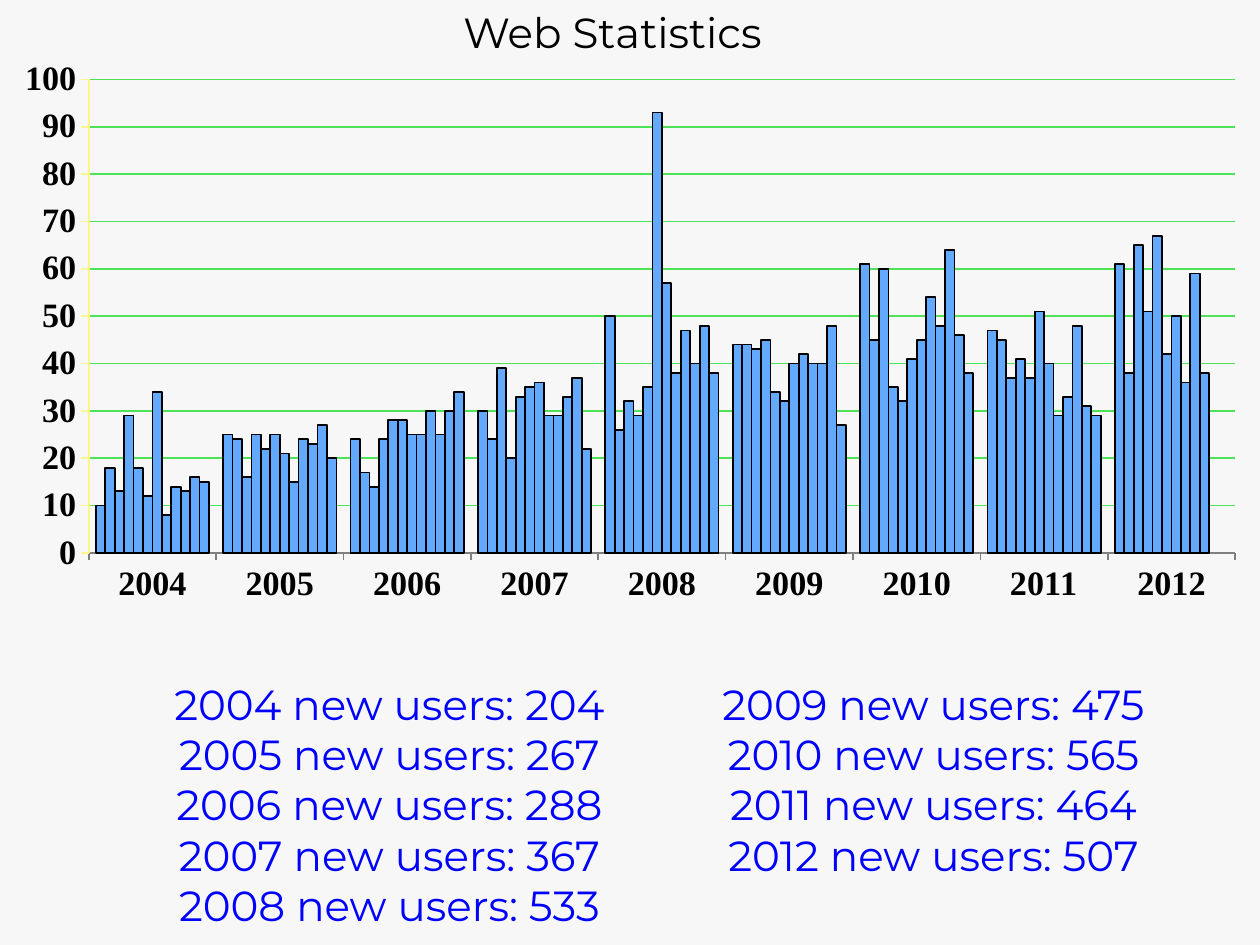
from lxml import etree
from pptx import Presentation
from pptx.chart.data import CategoryChartData
from pptx.dml.color import RGBColor
from pptx.enum.chart import XL_CHART_TYPE as Kind, XL_TICK_LABEL_POSITION as Label
from pptx.enum.chart import XL_TICK_MARK as Tick
from pptx.enum.text import PP_ALIGN as Align
from pptx.oxml.ns import qn
from pptx.util import Emu, Pt

PX = 914400 // 126
BACK = RGBColor(0xF7, 0xF7, 0xF7)
BLACK = RGBColor(0, 0, 0)
BLUE = RGBColor(0, 0, 0xFF)
BAR = RGBColor(0x63, 0xAA, 0xFE)
GRID = RGBColor(0x4E, 0xE2, 0x57)
YELLOW = RGBColor(0xFF, 0xF5, 0x8C)
GREY = RGBColor(0x80, 0x80, 0x80)

TITLE = "Web Statistics"
# New users per month, January first; 2012 stops in October.
MONTHLY = {
    "2004": [10, 18, 13, 29, 18, 12, 34, 8, 14, 13, 16, 15],
    "2005": [25, 24, 16, 25, 22, 25, 21, 15, 24, 23, 27, 20],
    "2006": [24, 17, 14, 24, 28, 28, 25, 25, 30, 25, 30, 34],
    "2007": [30, 24, 39, 20, 33, 35, 36, 29, 29, 33, 37, 22],
    "2008": [50, 26, 32, 29, 35, 93, 57, 38, 47, 40, 48, 38],
    "2009": [44, 44, 43, 45, 34, 32, 40, 42, 40, 40, 48, 27],
    "2010": [61, 45, 60, 35, 32, 41, 45, 54, 48, 64, 46, 38],
    "2011": [47, 45, 37, 41, 37, 51, 40, 29, 33, 48, 31, 29],
    "2012": [61, 38, 65, 51, 67, 42, 50, 36, 59, 38, None, None],
}
TOTALS = {
    "2004": 204, "2005": 267, "2006": 288, "2007": 367, "2008": 533,
    "2009": 475, "2010": 565, "2011": 464, "2012": 507,
}
PLOT = {"x": 0.068, "y": 0.06, "w": 0.921, "h": 0.759}


def box(*px):
    return [Emu(n * PX) for n in px]


def add_text(slide, area, lines, color, align, wrap):
    frame = slide.shapes.add_textbox(*box(*area)).text_frame
    frame.word_wrap = wrap
    frame.text = "\n".join(lines)
    for para in frame.paragraphs:
        para.alignment = align
        font = para.runs[0].font
        font.name, font.size = "Montserrat", Pt(24)
        font.color.rgb = color
    return frame


def set_line(line, color):
    line.color.rgb = color
    line.width = Pt(1)


def set_plot(chart):
    """Fix the inner plot area, in fractions of the chart."""
    area = chart.plots[0]._element.getparent()
    for old in area.findall(qn("c:layout")):
        area.remove(old)
    layout = etree.Element(qn("c:layout"))
    area.insert(0, layout)
    manual = etree.SubElement(layout, qn("c:manualLayout"))
    parts = {"layoutTarget": "inner", "xMode": "edge", "yMode": "edge", **PLOT}
    for tag, val in parts.items():
        etree.SubElement(manual, qn("c:" + tag)).set("val", str(val))


def add_bars(slide):
    data = CategoryChartData()
    data.categories = list(MONTHLY)
    for num, vals in enumerate(zip(*MONTHLY.values()), 1):
        data.add_series(f"Series {num}", vals)
    chart = slide.shapes.add_chart(
        Kind.COLUMN_CLUSTERED, *box(4, 42, 1245, 624), data).chart
    chart.has_legend = chart.has_title = False
    font = chart.font
    font.name, font.size, font.bold = "Times New Roman", Pt(19.5), True
    font.color.rgb = BLACK
    set_plot(chart)

    plot = chart.plots[0]
    plot.gap_width, plot.overlap = 150, 0
    plot.vary_by_categories = False
    for series in plot.series:
        series.format.fill.solid()
        series.format.fill.fore_color.rgb = BAR
        set_line(series.format.line, BLACK)

    years, count = chart.category_axis, chart.value_axis
    for axis, color in ((years, GREY), (count, YELLOW)):
        axis.major_tick_mark, axis.minor_tick_mark = Tick.OUTSIDE, Tick.NONE
        set_line(axis.format.line, color)
    years.tick_label_position = Label.LOW
    years.has_major_gridlines = False
    count.minimum_scale, count.maximum_scale, count.major_unit = 0, 100, 10
    count.has_major_gridlines = True
    set_line(count.major_gridlines.format.line, GRID)


def main():
    deck = Presentation()
    deck.slide_width, deck.slide_height = box(1260, 945)
    slide = deck.slides.add_slide(deck.slide_layouts[6])
    slide.background.fill.solid()
    slide.background.fill.fore_color.rgb = BACK

    add_text(slide, (451, 0, 359, 63), [TITLE], BLACK, Align.LEFT, False)
    add_bars(slide)
    lines = [f"{year} new users: {total}" for year, total in TOTALS.items()]
    users = add_text(slide, (105, 672, 1113, 262), lines, BLUE, Align.CENTER, True)
    users._txBody.bodyPr.set("numCol", "2")
    deck.save("out.pptx")


if __name__ == "__main__":
    main()
